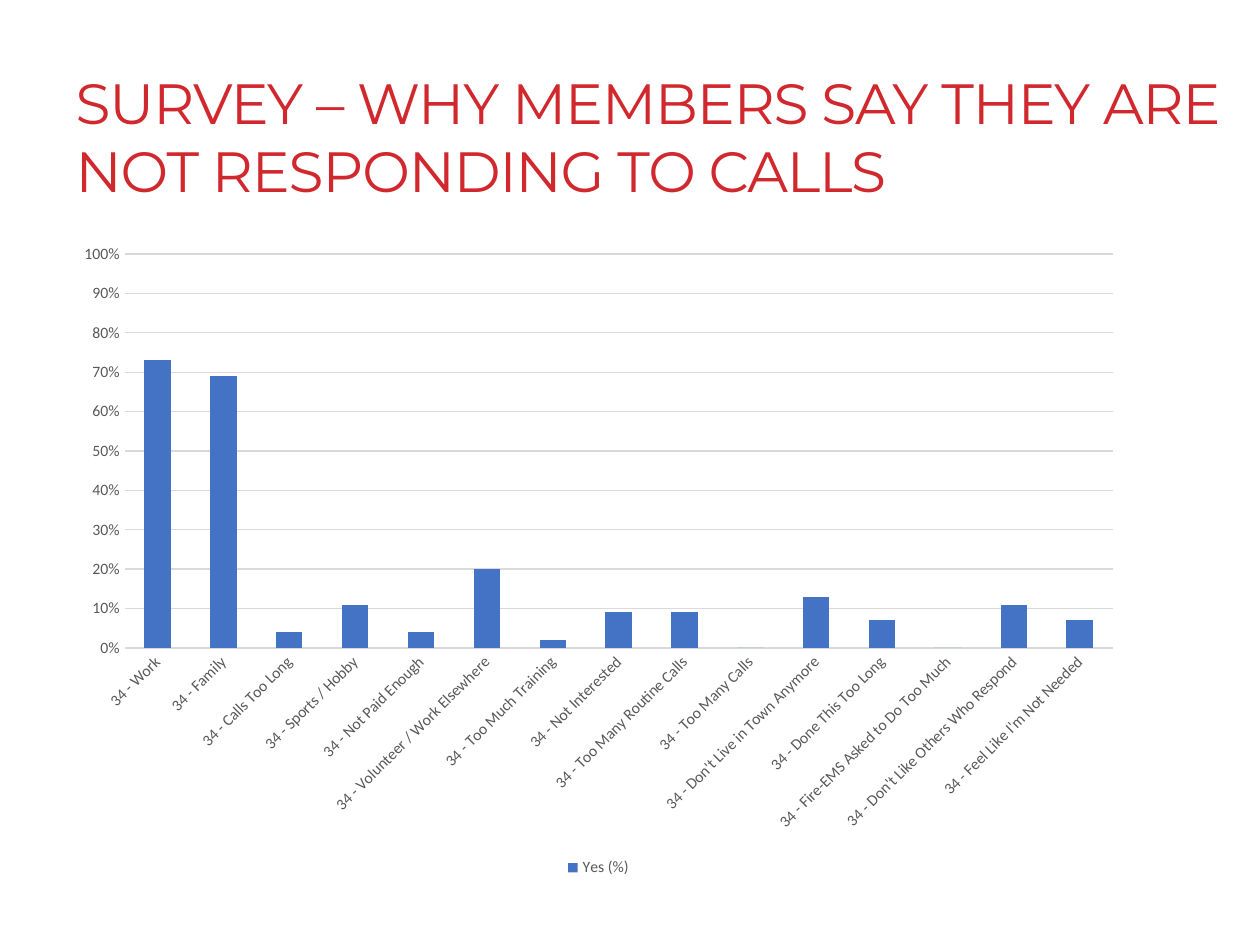
from dataclasses import dataclass

from lxml import etree
from pptx import Presentation
from pptx.chart.data import CategoryChartData
from pptx.dml.color import RGBColor
from pptx.enum.chart import XL_CHART_TYPE as ChartType
from pptx.enum.chart import XL_LEGEND_POSITION as LegendPosition
from pptx.enum.chart import XL_TICK_MARK as TickMark
from pptx.enum.text import MSO_ANCHOR as Anchor
from pptx.enum.text import MSO_AUTO_SIZE as AutoSize
from pptx.enum.text import PP_ALIGN as Align
from pptx.util import Pt


@dataclass(frozen=True)
class Theme:
    heading_font: str = "Montserrat"
    body_font: str = "Calibri"
    heading_size: float = 32.4
    label_size: float = 9
    heading: RGBColor = RGBColor(0xD1, 0x28, 0x2E)
    label: RGBColor = RGBColor(0x59, 0x59, 0x59)
    grid: RGBColor = RGBColor(0xD9, 0xD9, 0xD9)
    bar: RGBColor = RGBColor(0x44, 0x72, 0xC4)


THEME = Theme()
TITLE = "SURVEY – WHY MEMBERS SAY THEY ARE NOT RESPONDING TO CALLS"
QUESTION = 34
REASONS = {
    "Work": 0.73,
    "Family": 0.69,
    "Calls Too Long": 0.04,
    "Sports / Hobby": 0.11,
    "Not Paid Enough": 0.04,
    "Volunteer / Work Elsewhere": 0.2,
    "Too Much Training": 0.02,
    "Not Interested": 0.09,
    "Too Many Routine Calls": 0.09,
    "Too Many Calls": 0,
    "Don't Live in Town Anymore": 0.13,
    "Done This Too Long": 0.07,
    "Fire-EMS Asked to Do Too Much": 0,
    "Don't Like Others Who Respond": 0.11,
    "Feel Like I'm Not Needed": 0.07,
}


def set_all(target, values):
    for name, value in values.items():
        setattr(target, name, value)


def style_font(font, name, size, color):
    set_all(font, {"name": name, "size": Pt(size), "bold": False})
    font.color.rgb = color


def style_label(font):
    style_font(font, THEME.body_font, THEME.label_size, THEME.label)


def style_line(line):
    line.width = Pt(0.75)
    line.color.rgb = THEME.grid


def add_title(page, text):
    title = page.shapes.title
    set_all(title, {"left": Pt(36), "top": Pt(12.24),
                    "width": Pt(671.76), "height": Pt(108)})
    frame = title.text_frame
    set_all(frame, {"word_wrap": True, "auto_size": AutoSize.NONE,
                    "vertical_anchor": Anchor.BOTTOM})
    para = frame.paragraphs[0]
    para.alignment = Align.LEFT
    span = para.add_run()
    span.text = text
    style_font(span.font, THEME.heading_font, THEME.heading_size, THEME.heading)
    span.font._element.set("spc", "-60")


def style_axes(chart):
    category_axis, value_axis = chart.category_axis, chart.value_axis
    for axis in (category_axis, value_axis):
        set_all(axis, {"major_tick_mark": TickMark.NONE,
                       "minor_tick_mark": TickMark.NONE})
        style_label(axis.tick_labels.font)
    style_line(category_axis.format.line)
    category_axis.tick_labels.font._element.getparent().getparent().getparent().bodyPr.set(
        "rot", "-2700000")

    set_all(value_axis, {"minimum_scale": 0, "maximum_scale": 1, "major_unit": 0.1,
                         "has_major_gridlines": True})
    set_all(value_axis.tick_labels, {"number_format": "0%",
                                     "number_format_is_linked": False})
    value_axis.format.line.fill.background()
    style_line(value_axis.major_gridlines.format.line)


def add_reason_chart(page):
    data = CategoryChartData(number_format="0%")
    data.categories = [f"{QUESTION} - {reason}" for reason in REASONS]
    data.add_series("Yes (%)", REASONS.values())
    chart = page.shapes.add_chart(ChartType.COLUMN_STACKED, Pt(36), Pt(132.48),
                                  Pt(612), Pt(371.52), data).chart
    set_all(chart, {"has_title": False, "has_legend": True})
    set_all(chart.font, {"name": THEME.body_font, "size": Pt(10)})
    set_all(chart.legend, {"position": LegendPosition.BOTTOM,
                           "include_in_layout": False})
    style_label(chart.legend.font)
    plot = chart.plots[0]
    set_all(plot, {"gap_width": 150, "overlap": 100, "vary_by_categories": False})
    fill = plot.series[0].format.fill
    fill.solid()
    fill.fore_color.rgb = THEME.bar
    style_axes(chart)


def main():
    deck = Presentation()
    set_all(deck, {"slide_width": Pt(720), "slide_height": Pt(540)})
    page = deck.slides.add_slide(deck.slide_layouts.get_by_name("Title Only"))
    add_reason_chart(page)
    add_title(page, TITLE)
    deck.save("out.pptx")


if __name__ == "__main__":
    main()
